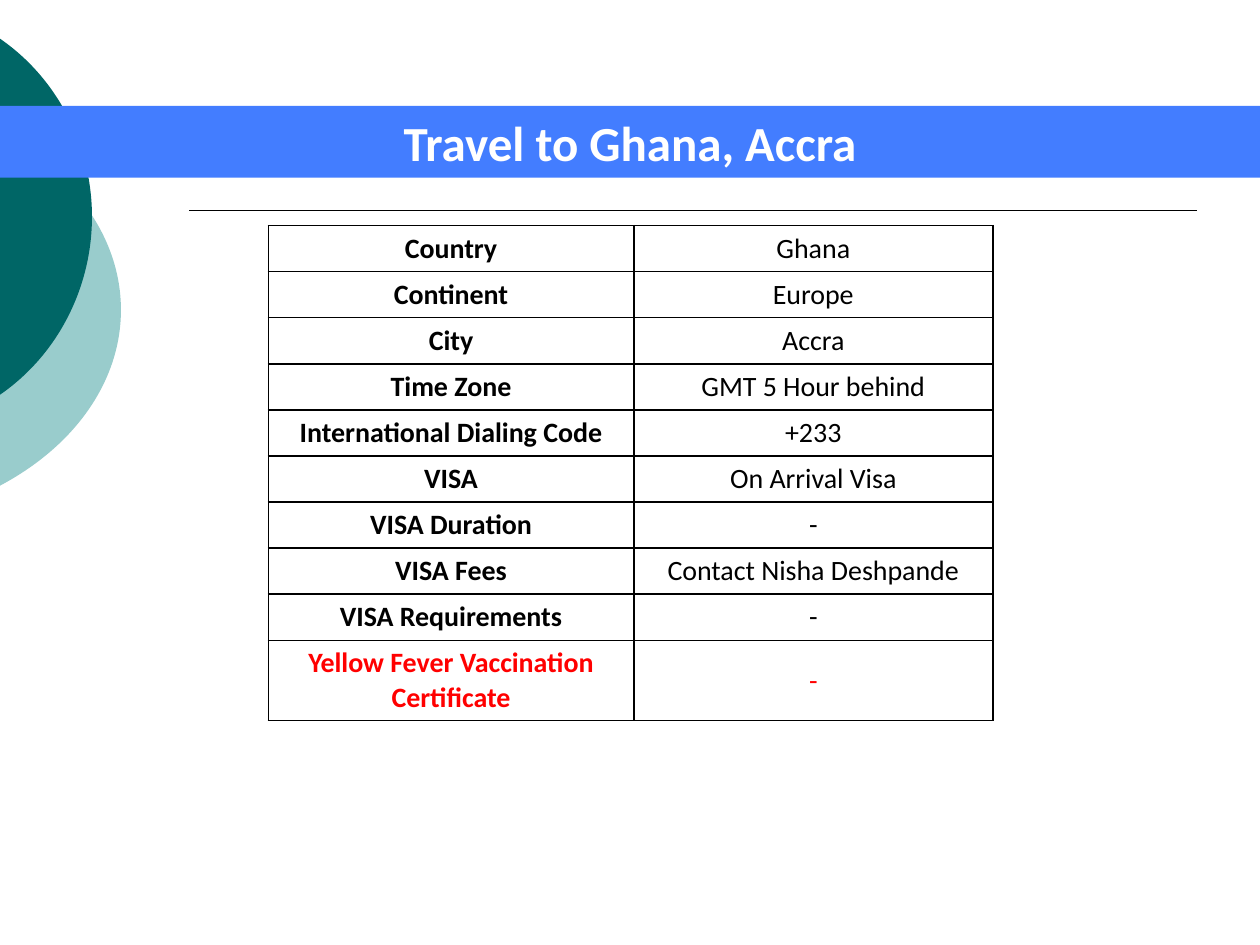
from pptx import Presentation
from pptx.dml.color import RGBColor
from pptx.enum.shapes import MSO_CONNECTOR, MSO_SHAPE
from pptx.enum.text import MSO_ANCHOR, PP_ALIGN
from pptx.oxml.ns import qn
from pptx.util import Inches, Pt
from lxml import etree

RECT = MSO_SHAPE.RECTANGLE
STRAIGHT = MSO_CONNECTOR.STRAIGHT
MIDDLE = MSO_ANCHOR.MIDDLE
CENTER = PP_ALIGN.CENTER

COLORS = {"pale": "99CCCC", "teal": "006666", "band": "437DFF",
          "white": "FFFFFF", "black": "000000", "red": "FF0000"}
FONT = "Calibri"
TITLE = "Travel to Ghana, Accra"
FACTS = [
    ("Country", "Ghana", "black"),
    ("Continent", "Europe", "black"),
    ("City", "Accra", "black"),
    ("Time Zone", "GMT 5 Hour behind", "black"),
    ("International Dialing Code", "+233", "black"),
    ("VISA", "On Arrival Visa", "black"),
    ("VISA Duration", "-", "black"),
    ("VISA Fees", "Contact Nisha Deshpande", "black"),
    ("VISA Requirements", "-", "black"),
    ("Yellow Fever Vaccination Certificate", "-", "red"),
]
COL_WIDTHS = (2.9, 2.85)
ROW_HEIGHT = 0.27
CELL_MARGIN = 3.4
TABLE_BOX = (2.13, 1.79, 5.75, 3.93)
ARCS = [
    ("pale", (-3.54, 0.75, 4.5, 3.42),
     [(-0.01, 1.06), (0.6, 1.38), (0.96, 1.9), (0.96, 2.46)]),
    ("teal", (-2.65, 0, 3.38, 3.45),
     [(-0.01, 0.3), (0.46, 0.62), (0.73, 1.16), (0.73, 1.72)]),
]


def rgb(name):
    return RGBColor.from_string(COLORS[name])


def add_arc(slide, color, box, upper):
    left, top, width, height = box
    right, bottom = left + width, top + height
    corners = [(left, top), (right, top), (right, bottom), (left, bottom)]
    corners = [(Inches(x), Inches(y)) for x, y in corners]
    builder = slide.shapes.build_freeform(*corners[0])
    builder.add_line_segments(corners[1:], close=True)
    s = builder.convert_to_shape()
    s.shadow.inherit = False
    s.fill.solid()
    s.fill.fore_color.rgb = rgb(color)
    s.line.fill.background()

    middle = upper[-1][1]
    lower = [(x, 2 * middle - y) for x, y in reversed(upper[:-1])]
    outline = next(s._element.iter(qn("a:path")))
    for child in list(outline):
        outline.remove(child)
    for tag, points in (("a:moveTo", upper[:1]), ("a:cubicBezTo", upper[1:]),
                        ("a:cubicBezTo", lower), ("a:close", [])):
        step = etree.SubElement(outline, qn(tag))
        for x, y in points:
            etree.SubElement(step, qn("a:pt"),
                             x=str(Inches(x - left)), y=str(Inches(y - top)))


def write(tf, text, size, color, bold):
    p = tf.paragraphs[0]
    p.alignment = CENTER
    r = p.add_run()
    r.text = text
    for name, value in {"name": FONT, "size": Pt(size), "bold": bold}.items():
        setattr(r.font, name, value)
    r.font.color.rgb = rgb(color)


def add_borders(cell):
    tc_pr = cell._tc.get_or_add_tcPr()
    for i, side in enumerate(("a:lnL", "a:lnR", "a:lnT", "a:lnB")):
        ln = etree.Element(qn(side), w=str(Pt(1)))
        fill = etree.SubElement(ln, qn("a:solidFill"))
        etree.SubElement(fill, qn("a:srgbClr"), val=COLORS["black"])
        tc_pr.insert(i, ln)


def add_facts(slide):
    frame = slide.shapes.add_table(len(FACTS), len(COL_WIDTHS), *map(Inches, TABLE_BOX))
    table = frame.table
    table.first_row = table.horz_banding = False
    for col, width in zip(table.columns, COL_WIDTHS):
        col.width = Inches(width)
    for i, (label, value, color) in enumerate(FACTS):
        table.rows[i].height = Inches(ROW_HEIGHT)
        for j, text in enumerate((label, value)):
            cell = table.cell(i, j)
            cell.fill.background()
            cell.vertical_anchor = MIDDLE
            cell.margin_top = cell.margin_bottom = Pt(CELL_MARGIN)
            write(cell.text_frame, text, 16, color, j == 0)
            add_borders(cell)
    frame.height = Inches(TABLE_BOX[3])


def main():
    prs = Presentation()
    prs.slide_width, prs.slide_height = Inches(10), Inches(7.5)
    slide = prs.slides.add_slide(prs.slide_layouts[6])

    for color, box, upper in ARCS:
        add_arc(slide, color, box, upper)

    rule = slide.shapes.add_connector(STRAIGHT, *map(Inches, (1.5, 1.67, 9.5, 1.67)))
    rule.line.color.rgb = rgb("black")
    rule.line.width = Pt(1)
    etree.SubElement(rule._element.spPr, qn("a:effectLst"))

    band = slide.shapes.add_shape(RECT, *map(Inches, (0, 0.84, 10, 0.57)))
    band.shadow.inherit = False
    band.fill.solid()
    band.fill.fore_color.rgb = rgb("band")
    band.line.fill.background()
    band.text_frame.word_wrap = True
    band.text_frame.vertical_anchor = MIDDLE
    write(band.text_frame, TITLE, 28, "white", True)

    add_facts(slide)
    prs.save("out.pptx")


if __name__ == "__main__":
    main()
